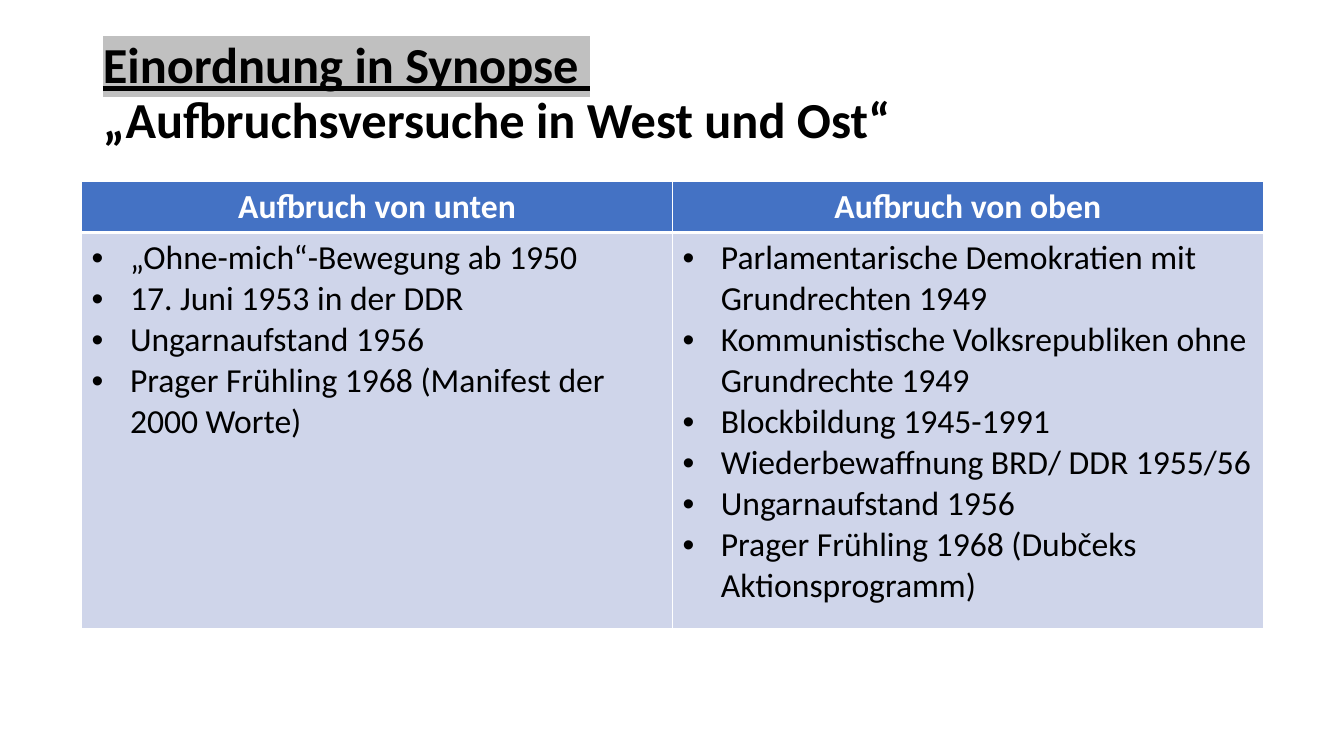
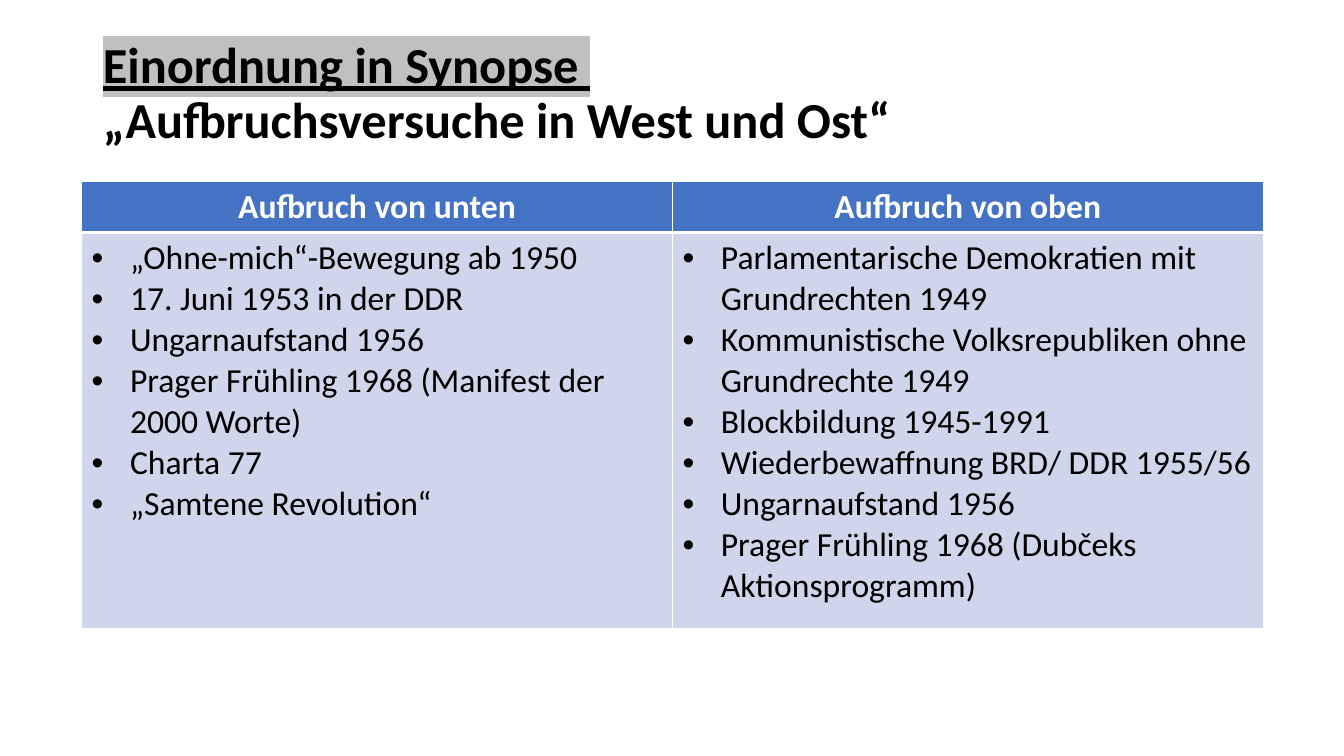
from lxml import etree
from pptx import Presentation
from pptx.dml.color import RGBColor
from pptx.enum.text import MSO_ANCHOR, MSO_AUTO_SIZE, PP_ALIGN
from pptx.oxml.ns import qn
from pptx.util import Inches, Pt

COLORS = {"text": "000000", "header_text": "FFFFFF", "header": "4472C4",
          "body": "CFD5EA", "border": "FFFFFF", "highlight": "C0C0C0"}
FONT = "Calibri"
TITLE_FORMAT = {"size": Pt(36), "bold": True, "name": FONT}
HEADER_FORMAT = {"size": Pt(24), "bold": True, "name": FONT}
BODY_FORMAT = {"size": Pt(24), "bold": False, "name": FONT}

TITLE = ("Einordnung in Synopse ", "„Aufbruchsversuche in West und Ost“")
HEADERS = ("Aufbruch von unten", "Aufbruch von oben")
FROM_BELOW = [
    "„Ohne-mich“-Bewegung ab 1950",
    "17. Juni 1953 in der DDR",
    "Ungarnaufstand 1956",
    "Prager Frühling 1968 (Manifest der 2000 Worte)",
]
FROM_ABOVE = [
    "Parlamentarische Demokratien mit Grundrechten 1949",
    "Kommunistische Volksrepubliken ohne Grundrechte 1949",
    "Blockbildung 1945-1991",
    "Wiederbewaffnung BRD/ DDR 1955/56",
    "Ungarnaufstand 1956",
    "Prager Frühling 1968 (Dubčeks Aktionsprogramm)",
]
SLIDES = [
    (FROM_BELOW, FROM_ABOVE),
    (FROM_BELOW + ["Charta 77", "„Samtene Revolution“"], FROM_ABOVE),
]

TITLE_BOX = [Inches(v) for v in (0.92, 0.34, 11.5, 1.2)]
TABLE_BOX = [Inches(v) for v in (0.81, 1.8, 11.72, 4.43)]
ROW_HEIGHTS = (Inches(0.5), Inches(3.93))
INDENT = Inches(0.38)


def add_run(p, text, fmt, color):
    r = p.add_run()
    r.text = text
    for name, value in fmt.items():
        setattr(r.font, name, value)
    r.font.color.rgb = RGBColor.from_string(COLORS[color])
    return r


def highlight(r, color):
    mark = etree.Element(qn("a:highlight"))
    etree.SubElement(mark, qn("a:srgbClr"), val=COLORS[color])
    r.font.fill  # the highlight has to follow the fill
    r.font._element.find(qn("a:solidFill")).addnext(mark)


def add_bullet(p):
    pPr = p._p.get_or_add_pPr()
    pPr.set("marL", str(INDENT))
    pPr.set("indent", str(-INDENT))
    etree.SubElement(pPr, qn("a:buFont"), typeface="Arial")
    etree.SubElement(pPr, qn("a:buChar"), char="•")


def set_borders(cell, top, bottom):
    """Draw all four cell edges; top and bottom are widths in points."""
    tcPr = cell._tc.get_or_add_tcPr()
    edges = (("lnL", 1), ("lnR", 1), ("lnT", top), ("lnB", bottom))
    for i, (edge, width) in enumerate(edges):
        ln = etree.Element(qn(f"a:{edge}"), w=str(Pt(width)))
        fill = etree.SubElement(ln, qn("a:solidFill"))
        etree.SubElement(fill, qn("a:srgbClr"), val=COLORS["border"])
        tcPr.insert(i, ln)


def fill_cell(cell, color):
    cell.fill.solid()
    cell.fill.fore_color.rgb = RGBColor.from_string(COLORS[color])


def set_title(s):
    title = s.shapes.title
    title.left, title.top, title.width, title.height = TITLE_BOX
    tf = title.text_frame
    tf.word_wrap = True
    tf.auto_size = MSO_AUTO_SIZE.NONE
    tf.vertical_anchor = MSO_ANCHOR.MIDDLE
    p = tf.paragraphs[0]
    p.alignment = PP_ALIGN.LEFT
    p.line_spacing = 0.9
    r = add_run(p, TITLE[0], TITLE_FORMAT | {"underline": True}, "text")
    highlight(r, "highlight")
    p.add_line_break()
    add_run(p, TITLE[1], TITLE_FORMAT, "text")


def add_synopsis(s, columns):
    table = s.shapes.add_table(2, len(columns), *TABLE_BOX).table
    for row, height in zip(table.rows, ROW_HEIGHTS):
        row.height = height
    for col, (header, items) in enumerate(zip(HEADERS, columns)):
        table.columns[col].width = TABLE_BOX[2] // len(columns)
        head, body = table.cell(0, col), table.cell(1, col)
        fill_cell(head, "header")
        set_borders(head, 1, 3)
        p = head.text_frame.paragraphs[0]
        p.alignment = PP_ALIGN.CENTER
        add_run(p, header, HEADER_FORMAT, "header_text")

        fill_cell(body, "body")
        set_borders(body, 3, 1)
        tf = body.text_frame
        for i, item in enumerate(items):
            p = tf.add_paragraph() if i else tf.paragraphs[0]
            add_bullet(p)
            add_run(p, item, BODY_FORMAT, "text")


def main():
    prs = Presentation()
    prs.slide_width, prs.slide_height = Inches(13.33), Inches(7.5)
    for columns in SLIDES:
        s = prs.slides.add_slide(prs.slide_layouts[5])
        set_title(s)
        add_synopsis(s, columns)
    prs.save("out.pptx")


if __name__ == "__main__":
    main()
